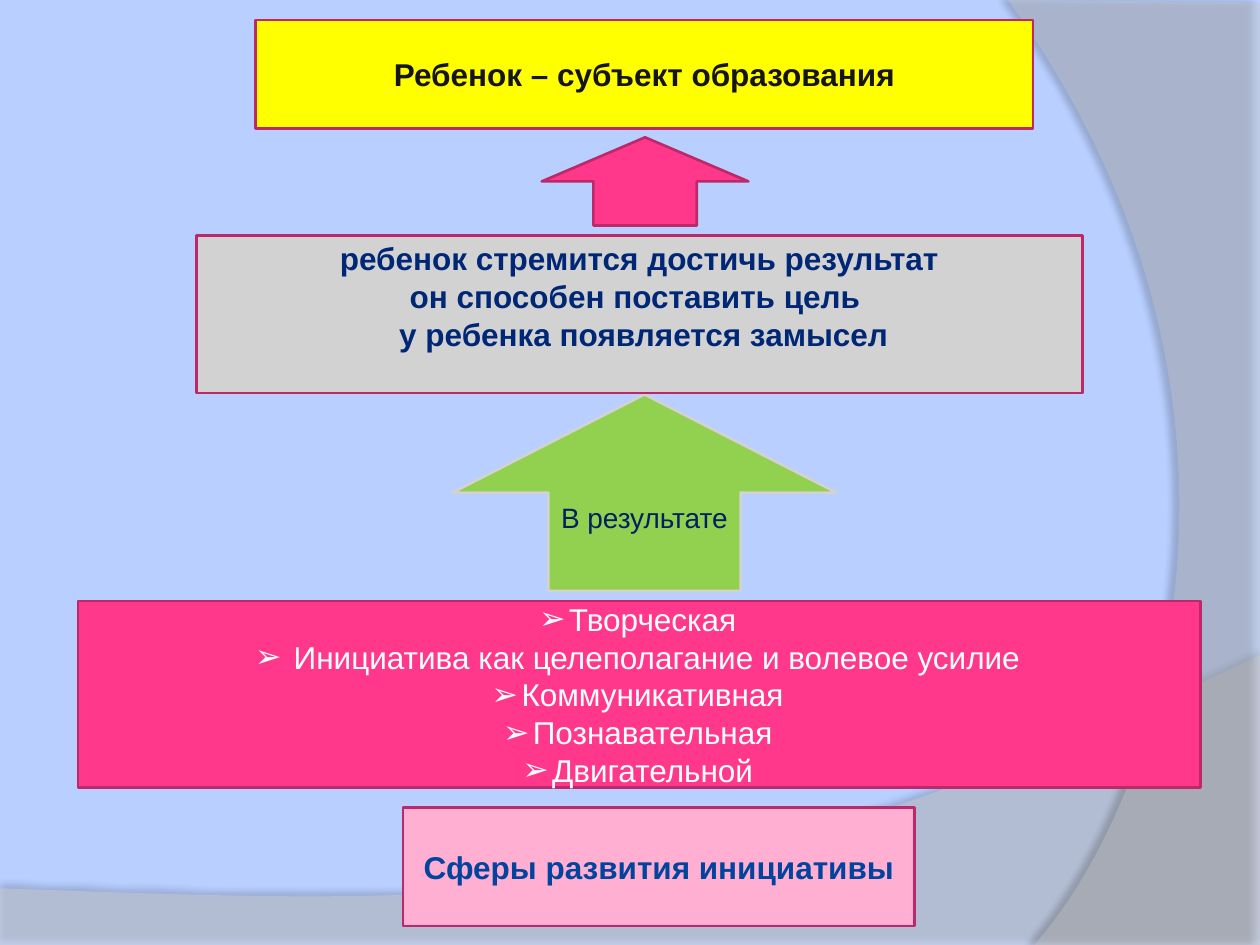
from lxml import etree
from pptx import Presentation
from pptx.dml.color import RGBColor
from pptx.enum.shapes import MSO_SHAPE as SHAPE
from pptx.enum.text import MSO_ANCHOR as ANCHOR, PP_ALIGN as ALIGN
from pptx.oxml.ns import qn
from pptx.util import Inches, Pt

COLORS = {
    "background": "B8CFFF", "wave": "CECECE", "arc": "C7C7C7", "shadow": "000000",
    "pink": "FF388C", "border": "BD2968", "light_pink": "FFAFD1",
    "gray": "D2D2D2", "green": "92D050", "yellow": "FFFF00",
    "white": "FFFFFF", "black": "151515", "navy": "002776",
    "blue": "00449E", "dark_blue": "002060",
}


def rgb(name):
    """Return the named colour."""
    return RGBColor.from_string(COLORS[name])


def add_text(sp, text, color, size=18, bold=False, bullet=None, bottom=0.05):
    """Write centred lines of text into a shape."""
    tf = sp.text_frame
    tf.word_wrap = True
    tf.vertical_anchor = ANCHOR.MIDDLE
    tf.margin_bottom = Inches(bottom)
    for i, line in enumerate(text.split("\n")):
        p = tf.paragraphs[0] if i == 0 else tf.add_paragraph()
        p.alignment = ALIGN.CENTER
        if bullet:
            pPr = p._p.get_or_add_pPr()
            etree.SubElement(pPr, qn("a:buFont"), typeface="Arial")
            etree.SubElement(pPr, qn("a:buChar"), char=bullet)
        r = p.add_run()
        r.text = line
        r.font.name, r.font.size, r.font.bold = "Arial", Pt(size), bold
        r.font.color.rgb = rgb(color)


def add_block(slide, kind, box, fill, border="border"):
    """Add a filled and outlined preset shape."""
    sp = slide.shapes.add_shape(kind, *map(Inches, box))
    sp.shadow.inherit = False
    sp.fill.solid()
    sp.fill.fore_color.rgb = rgb(fill)
    sp.line.color.rgb = rgb(border)
    sp.line.width = Pt(1.5)
    return sp


def add_panel(slide, box, fill, text, color, **fmt):
    """Add a rectangle with text."""
    add_text(add_block(slide, SHAPE.RECTANGLE, box, fill), text, color, **fmt)


def add_result_arrow(slide, box):
    """Add the labelled upward arrow inside its visible box."""
    x, y, w, h = box
    turned = (x + (w - h) / 2, y + (h - w) / 2, h, w)
    sp = add_block(slide, SHAPE.RIGHT_ARROW, turned, "green", "gray")
    sp.rotation = 270
    add_text(sp, "В результате", "dark_blue", size=16)
    sp.text_frame._txBody.bodyPr.set("vert", "vert")


def curve(a, b, c, d, steps=40):
    """Return points along a cubic curve, without its start."""
    ts = [i / steps for i in range(1, steps + 1)]
    return [tuple((1 - t) ** 3 * p + 3 * t * (1 - t) ** 2 * q
                  + 3 * t * t * (1 - t) * r + t ** 3 * s
                  for p, q, r, s in zip(a, b, c, d)) for t in ts]


def add_swoosh(slide, box, points, color, alpha, shadow):
    """Add a translucent background outline with a soft shadow."""
    x, y = box
    pts = [(Inches(x + px), Inches(y + py)) for px, py in points]
    builder = slide.shapes.build_freeform(*pts[0])
    builder.add_line_segments(pts[1:], close=True)
    sp = builder.convert_to_shape()
    sp.shadow.inherit = False
    sp.line.fill.background()
    sp.fill.solid()
    sp.fill.fore_color.rgb = rgb(color)
    clr = sp._element.spPr.find(qn("a:solidFill"))[0]
    etree.SubElement(clr, qn("a:alpha"), val=str(alpha * 1000))
    opacity, blur, dist, angle = shadow
    effects = sp._element.spPr.find(qn("a:effectLst"))
    outer = etree.SubElement(effects, qn("a:outerShdw"), blurRad=str(Pt(blur)),
                             dist=str(Pt(dist)), dir=str(angle * 60000),
                             algn="ctr", rotWithShape="0")
    tint = etree.SubElement(outer, qn("a:srgbClr"), val=COLORS["shadow"])
    etree.SubElement(tint, qn("a:alpha"), val=str(opacity * 1000))


def add_background(slide):
    """Colour the slide and add the bottom wave and the right arc."""
    slide.background.fill.solid()
    slide.background.fill.fore_color.rgb = rgb("background")
    wave = [(0, 1.85), (0, 2.31), (10, 2.31), (10, 0)]
    wave += curve(wave[-1], (5.59, 2.09), (3.91, 1.99), wave[0])
    add_swoosh(slide, (0, 5.2), wave, "wave", 45, (35, 4, 3.5, 270))
    arc = [(2, 0.02), (2, 7.5), (0.21, 7.5)]
    arc += curve(arc[-1], (1.35, 6.19), (2.18, 3), (0, 0))
    add_swoosh(slide, (8, 0), arc, "arc", 40, (45, 4, 4, 180))


def main():
    """Build the slide and save it."""
    prs = Presentation()
    prs.slide_width, prs.slide_height = Inches(10), Inches(7.5)
    slide = prs.slides.add_slide(prs.slide_layouts[6])
    add_background(slide)
    add_result_arrow(slide, (3.59, 3.13, 3.05, 1.56))
    add_panel(slide, (3.2, 6.41, 4.06, 0.94), "light_pink",
              "Сферы развития инициативы", "blue", bold=True)
    add_panel(slide, (0.62, 4.77, 8.91, 1.48), "pink",
              "Творческая\n Инициатива как целеполагание и волевое усилие\n"
              "Коммуникативная\nПознавательная\nДвигательной",
              "white", bullet="➢")
    add_panel(slide, (1.56, 1.87, 7.03, 1.25), "gray",
              "ребенок стремится достичь результат\n"
              "он способен поставить цель \n у ребенка появляется замысел",
              "navy", bold=True, bottom=0.34)
    add_block(slide, SHAPE.UP_ARROW, (4.3, 1.09, 1.64, 0.7), "pink")
    add_panel(slide, (2.03, 0.16, 6.17, 0.86), "yellow",
              "Ребенок – субъект образования", "black", bold=True)
    prs.save("out.pptx")


if __name__ == "__main__":
    main()
